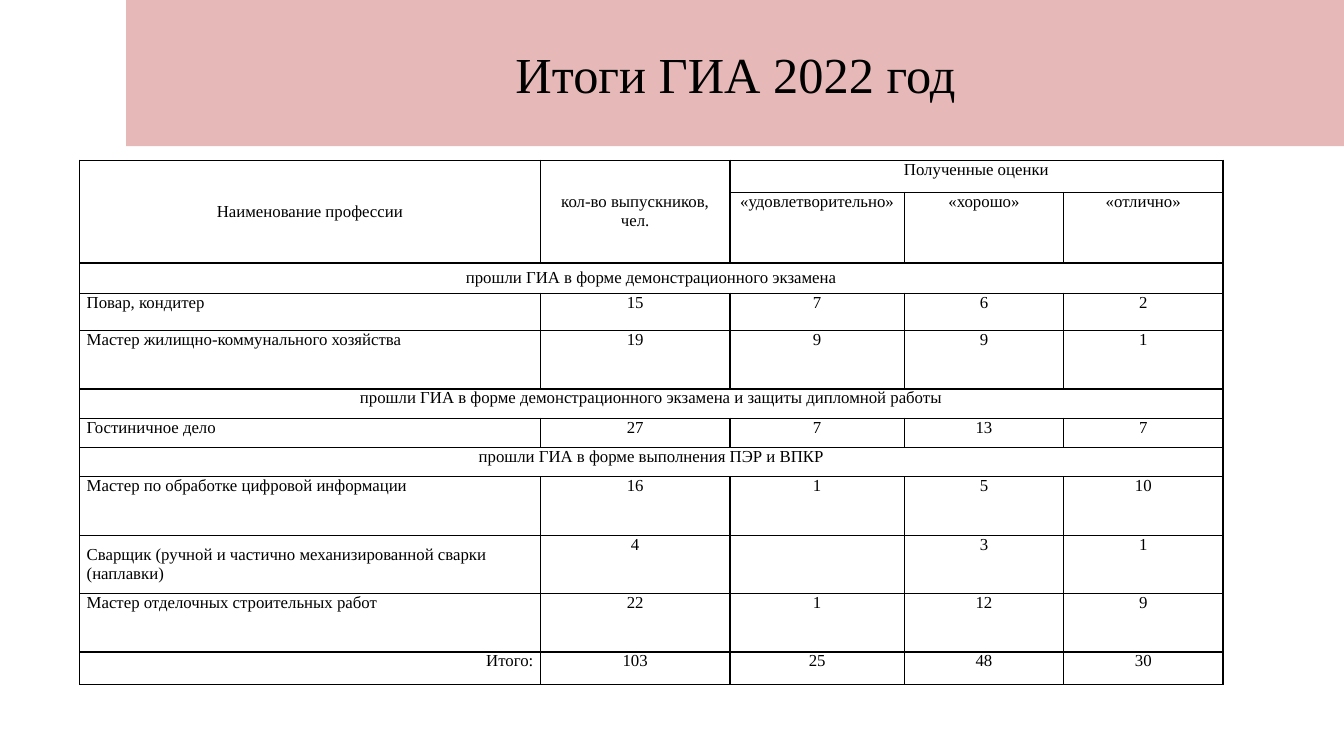
from lxml import etree
from pptx import Presentation
from pptx import util as u
from pptx.dml.color import RGBColor
from pptx.enum import text
from pptx.oxml import ns

FONT = "Times New Roman"
LEFT, CENTER, RIGHT = text.PP_ALIGN.LEFT, text.PP_ALIGN.CENTER, text.PP_ALIGN.RIGHT
COLUMN_WIDTHS = [4.57, 1.88, 1.73, 1.58, 1.58]
ROWS = [
    (0.32, ["Наименование профессии", "кол-во выпускников, чел.", "Полученные оценки"]),
    (0.7, ["", "", "«удовлетворительно»", "«хорошо»", "«отлично»"]),
    (0.3, ["прошли ГИА в форме демонстрационного экзамена"]),
    (0.37, ["Повар, кондитер", "15", "7", "6", "2"]),
    (0.58, ["Мастер жилищно-коммунального хозяйства", "19", "9", "9", "1"]),
    (0.29, ["прошли ГИА в форме демонстрационного экзамена и защиты дипломной работы"]),
    (0.29, ["Гостиничное дело", "27", "7", "13", "7"]),
    (0.29, ["прошли ГИА в форме выполнения ПЭР и ВПКР"]),
    (0.58, ["Мастер по обработке цифровой информации", "16", "1", "5", "10"]),
    (0.58, ["Сварщик (ручной и частично механизированной сварки (наплавки)", "4", "", "3", "1"]),
    (0.58, ["Мастер отделочных строительных работ", "22", "1", "12", "9"]),
    (0.32, ["Итого:", "103", "25", "48", "30"]),
]
HEADER_ROWS = 2
MIDDLE_CELLS = {(0, 0), (0, 1), (2, 0), (9, 0)}


def color(value):
    return RGBColor.from_string(value)


def format_paragraph(paragraph, size, alignment):
    paragraph.alignment = alignment
    paragraph.font.name = FONT
    paragraph.font.size = u.Pt(size)
    paragraph.font.color.rgb = color("000000")


def add_title(slide, wording):
    title = slide.shapes.title
    title.left, title.top = u.Inches(1.25), u.Inches(0)
    title.width, title.height = u.Inches(12.09), u.Inches(1.45)
    title.fill.solid()
    title.fill.fore_color.rgb = color("E6B9B8")
    title.text_frame.text = wording
    title.text_frame.auto_size = text.MSO_AUTO_SIZE.NONE
    title.text_frame.vertical_anchor = text.MSO_ANCHOR.MIDDLE
    format_paragraph(title.text_frame.paragraphs[0], 36, CENTER)


def add_borders(cell, value, width):
    properties = cell._tc.get_or_add_tcPr()
    for position, side in enumerate(("lnL", "lnR", "lnT", "lnB")):
        line = etree.Element(ns.qn(f"a:{side}"), w=str(u.Pt(width)))
        fill = etree.SubElement(line, ns.qn("a:solidFill"))
        etree.SubElement(fill, ns.qn("a:srgbClr"), val=value)
        properties.insert(position, line)


def format_cell(cell, wording, alignment, anchor):
    cell.text = wording
    cell.margin_left = cell.margin_right = u.Inches(0.07)
    cell.margin_top = cell.margin_bottom = u.Inches(0)
    cell.vertical_anchor = anchor
    cell.fill.background()
    add_borders(cell, "000000", 1)
    format_paragraph(cell.text_frame.paragraphs[0], 12, alignment)


def cell_alignment(row, column):
    is_section = len(ROWS[row][1]) == 1
    if column > 0 or row < HEADER_ROWS or is_section:
        return CENTER
    return RIGHT if row == len(ROWS) - 1 else LEFT


def add_results_table(slide):
    frame = slide.shapes.add_table(
        len(ROWS), len(COLUMN_WIDTHS), u.Inches(0.79), u.Inches(1.59),
        u.Inches(sum(COLUMN_WIDTHS)), u.Inches(sum(height for height, _ in ROWS)))
    table = frame.table
    table.first_row = table.horz_banding = False
    for column, width in zip(table.columns, COLUMN_WIDTHS):
        column.width = u.Inches(width)
    last = len(COLUMN_WIDTHS) - 1
    for row, (height, wordings) in enumerate(ROWS):
        table.rows[row].height = u.Inches(height)
        for column in range(last + 1):
            wording = wordings[column] if column < len(wordings) else ""
            middle = (row, column) in MIDDLE_CELLS
            anchor = text.MSO_ANCHOR.MIDDLE if middle else text.MSO_ANCHOR.TOP
            format_cell(table.cell(row, column), wording, cell_alignment(row, column), anchor)
        if len(wordings) == 1:
            table.cell(row, 0).merge(table.cell(row, last))
    for column in (0, 1):
        table.cell(0, column).merge(table.cell(1, column))
    table.cell(0, 2).merge(table.cell(0, last))


def main():
    """Build the slide with the 2022 final examination results."""
    presentation = Presentation()
    presentation.slide_width, presentation.slide_height = u.Inches(13.33), u.Inches(7.5)
    slide = presentation.slides.add_slide(presentation.slide_layouts[5])
    add_title(slide, "Итоги ГИА 2022 год")
    add_results_table(slide)
    presentation.save("out.pptx")


if __name__ == "__main__":
    main()
